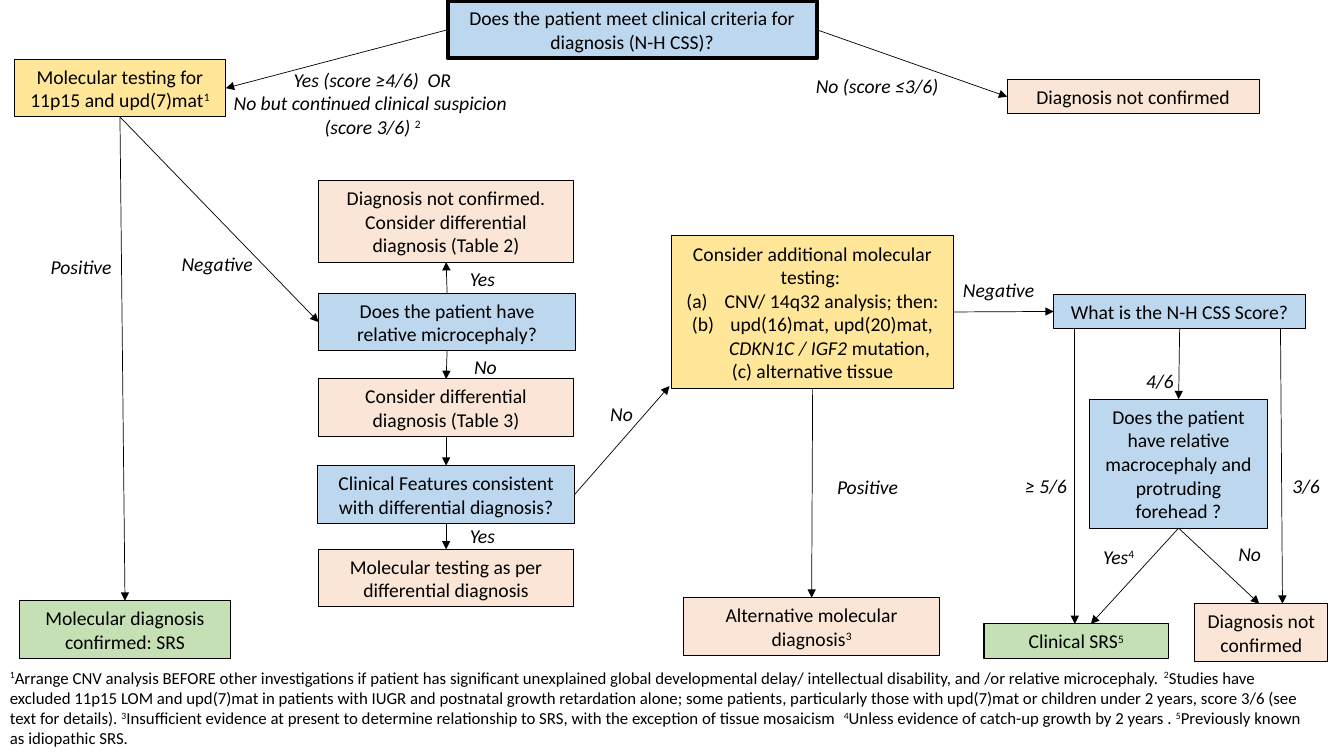
from lxml import etree
from pptx import Presentation
from pptx.dml.color import RGBColor
from pptx.enum.shapes import MSO_CONNECTOR, MSO_SHAPE
from pptx.enum.text import MSO_ANCHOR, MSO_AUTO_SIZE, PP_ALIGN
from pptx.oxml.ns import qn
from pptx.util import Emu, Pt

RECT = MSO_SHAPE.RECTANGLE
STRAIGHT = MSO_CONNECTOR.STRAIGHT
CENTER, LEFT_ALIGN = PP_ALIGN.CENTER, PP_ALIGN.LEFT
MIDDLE, UPPER = MSO_ANCHOR.MIDDLE, MSO_ANCHOR.TOP
GROW = MSO_AUTO_SIZE.SHAPE_TO_FIT_TEXT
TOP, LEFT, BOTTOM, RIGHT = range(4)

PX = 9144
SLIDE_W, SLIDE_H = 1333, 750
LIST_INDENT = 38
FONT = "Calibri"
COLORS = {
    "ink": "000000",
    "question": "BDD7EE",
    "outcome": "FBE5D6",
    "testing": "FFE699",
    "confirmed": "C5E0B4",
}

STEPS = {
    "criteria": ("question", (444, 1, 366, 57),
                 ["Does the patient meet clinical criteria for diagnosis (N-H CSS)?"]),
    "not_met": ("outcome", (999, 79, 250, 34), ["Diagnosis not confirmed"]),
    "first_test": ("testing", (14, 59, 210, 57),
                   ["Molecular testing for 11p15 and upd(7)mat^1^"]),
    "molecular_srs": ("confirmed", (19, 596, 210, 57),
                      ["Molecular diagnosis confirmed: SRS"]),
    "table_2": ("outcome", (316, 179, 253, 81),
                ["Diagnosis not confirmed.",
                 "Consider differential diagnosis (Table 2)"]),
    "microcephaly": ("question", (316, 291, 255, 57),
                     ["Does the patient have relative microcephaly?"]),
    "table_3": ("outcome", (316, 376, 253, 57),
                ["Consider differential diagnosis (Table 3)"]),
    "features": ("question", (315, 462, 255, 57),
                 ["Clinical Features consistent with differential diagnosis?"]),
    "differential_test": ("outcome", (316, 545, 253, 57),
                          ["Molecular testing as per differential diagnosis"]),
    "more_tests": ("testing", (666, 234, 280, 151),
                   ["Consider additional molecular testing: ",
                    "#CNV/ 14q32 analysis; then:",
                    "#upd(16)mat, upd(20)mat, *CDKN1C / IGF2 *mutation, ",
                    "(c) alternative tissue"]),
    "alternative": ("outcome", (678, 593, 254, 57),
                    ["Alternative molecular diagnosis^3^"]),
    "score": ("question", (1045, 292, 250, 34), ["What is the N-H CSS Score?"]),
    "macrocephaly": ("question", (1081, 396, 176, 128),
                     ["Does the patient have relative macrocephaly and "
                      "protruding forehead ?"]),
    "clinical_srs": ("confirmed", (976, 619, 183, 34), ["Clinical SRS^5^"]),
    "low_score": ("outcome", (1185, 599, 132, 57), ["Diagnosis not confirmed"]),
}

ARROWS = [
    (("criteria", LEFT), ("first_test", RIGHT)),
    (("criteria", RIGHT), ("not_met", LEFT)),
    (("first_test", BOTTOM), ("molecular_srs", TOP)),
    (("first_test", BOTTOM), ("microcephaly", LEFT)),
    (("microcephaly", TOP), ("table_2", BOTTOM)),
    (("microcephaly", BOTTOM), ("table_3", TOP)),
    (("table_3", BOTTOM), ("features", TOP)),
    (("features", BOTTOM), ("differential_test", TOP)),
    (("features", RIGHT), (664, 383)),
    (("more_tests", RIGHT), ("score", LEFT)),
    (("more_tests", BOTTOM), ("alternative", TOP)),
    (("score", BOTTOM), ("macrocephaly", TOP)),
    (("macrocephaly", BOTTOM), (1082, 619)),
    (("macrocephaly", BOTTOM), (1249, 599)),
    ((1066, 326), (1066, 619)),
    ((1270, 326), (1272, 599)),
]

ANSWER_SIZE = (123, 34)
ANSWERS = [
    ("Positive", 19, 248), ("Negative", 154, 245), ("Yes", 417, 260),
    ("No", 420, 347), ("Yes", 417, 515), ("No", 555, 394),
    ("Positive", 799, 466), ("Negative", 929, 271), ("≥ 5/6", 976, 465),
    ("4/6", 1089, 361), ("3/6", 1234, 465), ("Yes^4^", 1048, 536),
    ("No", 1178, 533),
]
CRITERIA_ANSWERS = [
    (["Yes (score ≥4/6)  OR", "No but continued clinical suspicion ",
      "(score 3/6) ^2^"], (190, 62, 359, 104)),
    (["No (score ≤3/6)"], (799, 68, 142, 34)),
]
FOOTNOTES_BOX = (0, 657, 1317, 91)
FOOTNOTES = (
    "^1^Arrange CNV analysis BEFORE other investigations if patient has "
    "significant unexplained global developmental delay/ intellectual "
    "disability, and /or relative microcephaly. ^2^Studies have excluded "
    "11p15 LOM and upd(7)mat in patients with IUGR and postnatal growth "
    "retardation alone; some patients, particularly those with upd(7)mat or "
    "children under 2 years, score 3/6 (see text for details). "
    "^3^Insufficient evidence at present to determine relationship to SRS, "
    "with the exception of tissue mosaicism  ^4^Unless evidence of catch-up "
    "growth by 2 years . ^5^Previously known as idiopathic SRS."
)


def px(*lengths):
    return [Emu(length * PX) for length in lengths]


def color(name):
    return RGBColor.from_string(COLORS[name])


def add_lettering(paragraph):
    properties = paragraph._p.get_or_add_pPr()
    for key, value in {"marL": LIST_INDENT, "indent": -LIST_INDENT}.items():
        properties.set(key, str(value * PX))
    lettering = etree.SubElement(properties, qn("a:buAutoNum"))
    lettering.set("type", "alphaLcParenBoth")


def write(shape, lines, size=14, align=CENTER, anchor=UPPER, italic=False):
    frame = shape.text_frame
    settings = {"word_wrap": True, "auto_size": GROW, "vertical_anchor": anchor}
    for key, value in settings.items():
        setattr(frame, key, value)
    for index, line in enumerate(lines):
        paragraph = frame.add_paragraph() if index else frame.paragraphs[0]
        paragraph.alignment = align
        if line.startswith("#"):
            add_lettering(paragraph)
        for level, part in enumerate(line.lstrip("#").split("^")):
            raised = level % 2 == 1
            for slant, piece in enumerate(part.split("*")):
                if not piece:
                    continue
                run = paragraph.add_run()
                run.text = piece
                style = {"name": FONT, "size": Pt(size),
                         "italic": slant % 2 == 1 or (italic and not raised)}
                for key, value in style.items():
                    setattr(run.font, key, value)
                run.font.color.rgb = color("ink")
                if raised:
                    run.font._element.set("baseline", "30000")


def add_step(shapes, kind, box, lines, border):
    step = shapes.add_shape(RECT, *px(*box))
    step.shadow.inherit = False
    step.fill.solid()
    step.fill.fore_color.rgb = color(kind)
    step.line.color.rgb = color("ink")
    step.line.width = Pt(border)
    write(step, lines, anchor=MIDDLE)
    return step


def add_arrow(shapes, steps, start, end):
    points = [(0, 0) if isinstance(place[0], str) else place for place in (start, end)]
    arrow = shapes.add_connector(STRAIGHT, *px(*points[0], *points[1]))
    for place, join in ((start, arrow.begin_connect), (end, arrow.end_connect)):
        if isinstance(place[0], str):
            join(steps[place[0]], place[1])
    arrow.line.color.rgb = color("ink")
    arrow.line.width = Pt(0.5)
    etree.SubElement(arrow.line._get_or_add_ln(), qn("a:tailEnd")).set("type", "triangle")
    etree.SubElement(arrow._element.spPr, qn("a:effectLst"))


def main():
    deck = Presentation()
    deck.slide_width, deck.slide_height = px(SLIDE_W, SLIDE_H)
    shapes = deck.slides.add_slide(deck.slide_layouts[6]).shapes

    steps = {}
    for name, (kind, box, lines) in STEPS.items():
        border = 3 if name == "criteria" else 0.75
        steps[name] = add_step(shapes, kind, box, lines, border)
    for start, end in ARROWS:
        add_arrow(shapes, steps, start, end)
    answers = [([text], (x, y, *ANSWER_SIZE)) for text, x, y in ANSWERS]
    for lines, box in CRITERIA_ANSWERS + answers:
        write(shapes.add_textbox(*px(*box)), lines, italic=True)
    footnotes = shapes.add_textbox(*px(*FOOTNOTES_BOX))
    write(footnotes, [FOOTNOTES], size=12, align=LEFT_ALIGN)
    deck.save("out.pptx")


if __name__ == "__main__":
    main()
